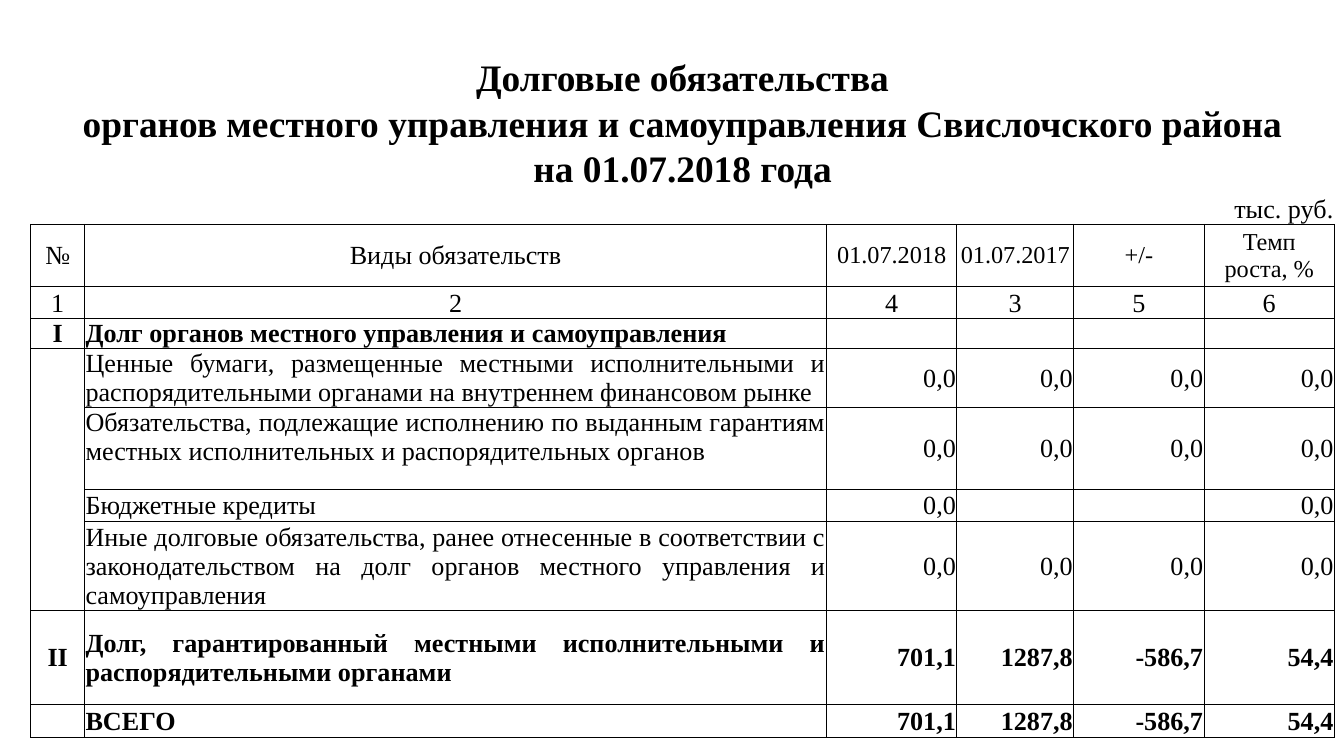
from dataclasses import dataclass
from lxml.etree import SubElement as Sub
from pptx import Presentation
from pptx.dml.color import RGBColor as Rgb
from pptx.enum.text import MSO_ANCHOR as Anchor, PP_ALIGN as Align
from pptx.oxml.ns import qn
from pptx.table import Table, _Cell as Cell
from pptx.util import Inches, Pt


@dataclass(frozen=True)
class Theme:
    font: str = "Times New Roman"
    ink: str = "000000"
    paper: str = "FFFFFF"
    head: float = 20
    body: float = 14
    small: float = 13
    line: float = 0.5
    inset: float = 0.5


@dataclass(frozen=True)
class Banner:
    text: str
    high: float
    size: float
    bold: bool
    side: Align


@dataclass(frozen=True)
class Row:
    high: float
    cells: tuple[str, ...]
    bold: bool = False
    anchor: Anchor = Anchor.MIDDLE
    label: Anchor = Anchor.MIDDLE
    side: Align = Align.JUSTIFY
    edges: str = "LRTB"


THEME = Theme()
WIDTHS = (0.4, 5.52, 0.97, 0.87, 0.97, 0.97)
ZEROS = ("0,0",) * 4
SUMS = ("701,1", "1287,8", "-586,7", "54,4")

# Title lines and unit, each across the whole table
BANNERS = (
    Banner("Долговые обязательства", 0.35, THEME.head, True, Align.CENTER),
    Banner("органов местного управления и самоуправления Свислочского района",
           0.34, THEME.head, True, Align.CENTER),
    Banner("на 01.07.2018 года", 0.34, THEME.head, True, Align.CENTER),
    Banner("тыс. руб.", 0.25, THEME.body, False, Align.RIGHT),
)

# Column heads and their numbers
HEADS = (
    Row(0.46, ("№", "Виды обязательств", "01.07.2018", "01.07.2017", "+/-",
               "Темп\nроста, %")),
    Row(0.24, ("1", "2", "4", "3", "5", "6"), anchor=Anchor.BOTTOM,
        label=Anchor.BOTTOM),
)

# Debt rows; edges are those of the first cell
DEBTS = (
    Row(0.22, ("I", "Долг органов местного управления и самоуправления",
               "", "", "", ""), bold=True),
    Row(0.44, ("", "Ценные бумаги, размещенные местными исполнительными и "
               "распорядительными органами на внутреннем финансовом рынке",
               *ZEROS), edges="LRT"),
    Row(0.61, ("", "Обязательства, подлежащие исполнению по выданным гарантиям "
               "местных исполнительных и распорядительных органов", *ZEROS),
        label=Anchor.TOP, edges="LR"),
    Row(0.24, ("", "Бюджетные кредиты", "0,0", "", "", "0,0"), edges="LR"),
    Row(0.66, ("", "Иные долговые обязательства, ранее отнесенные в "
               "соответствии с законодательством на долг органов местного "
               "управления и самоуправления", *ZEROS), edges="LRB"),
    Row(0.7, ("II", "Долг, гарантированный местными исполнительными и "
              "распорядительными органами", *SUMS), bold=True),
    Row(0.25, ("", "ВСЕГО", *SUMS), bold=True, side=Align.LEFT),
)


def rule(cell: Cell, edges: str) -> None:
    """Draw the named edges and clear the others."""
    props = cell._tc.get_or_add_tcPr()
    for edge in "LRTB":
        line = Sub(props, qn(f"a:ln{edge}"), w=str(Pt(THEME.line)))
        if edge in edges:
            fill = Sub(line, qn("a:solidFill"))
            Sub(fill, qn("a:srgbClr"), val=THEME.ink)
        else:
            Sub(line, qn("a:noFill"))


def write(cell: Cell, text: str, size: float, bold: bool, side: Align,
          anchor: Anchor, edges: str) -> None:
    rule(cell, edges)
    cell.fill.solid()
    cell.fill.fore_color.rgb = Rgb.from_string(THEME.paper)
    cell.margin_left = cell.margin_right = cell.margin_top = Pt(THEME.inset)
    cell.margin_bottom = 0
    cell.vertical_anchor = anchor
    cell.text_frame.text = text
    for para in cell.text_frame.paragraphs:
        para.alignment = side
        for run in para.runs:
            font = run.font
            font.name, font.size, font.bold = THEME.font, Pt(size), bold
            font.color.rgb = Rgb.from_string(THEME.ink)
        if not para.runs:
            end = Sub(para._p, qn("a:endParaRPr"), sz=str(int(size * 100)))
            Sub(end, qn("a:latin"), typeface=THEME.font)


def draw_banner(table: Table, index: int, item: Banner, edges: str) -> None:
    for col in range(len(WIDTHS)):
        write(table.cell(index, col), "" if col else item.text, item.size,
              item.bold, item.side, Anchor.BOTTOM, edges)
    table.cell(index, 0).merge(table.cell(index, len(WIDTHS) - 1))


def draw_row(table: Table, index: int, row: Row, head: bool) -> None:
    for col, text in enumerate(row.cells):
        side = Align.CENTER if head or col == 0 else (
            row.side if col == 1 else Align.RIGHT)
        size = THEME.small if row is HEADS[0] and col > 1 else THEME.body
        write(table.cell(index, col), text, size, row.bold, side,
              row.label if col == 1 else row.anchor,
              "LRTB" if col else row.edges)


def main() -> None:
    deck = Presentation()
    deck.slide_width = Inches(10)
    deck.slide_height = deck.slide_width * 9 // 16
    slide = deck.slides.add_slide(deck.slide_layouts[6])

    # Table frame
    rows = BANNERS + HEADS + DEBTS
    frame = slide.shapes.add_table(
        len(rows), len(WIDTHS), Inches(0.23), Inches(0.39),
        Inches(sum(WIDTHS)), Inches(sum(row.high for row in rows)))
    table = frame.table
    table.first_row = table.horz_banding = False
    for col, width in zip(table.columns, WIDTHS):
        col.width = Inches(width)

    # Table content
    for index, row in enumerate(rows):
        table.rows[index].height = Inches(row.high)
        if isinstance(row, Banner):
            draw_banner(table, index, row, "B" if row is BANNERS[-1] else "")
        else:
            draw_row(table, index, row, row in HEADS)
    deck.save("out.pptx")


if __name__ == "__main__":
    main()
